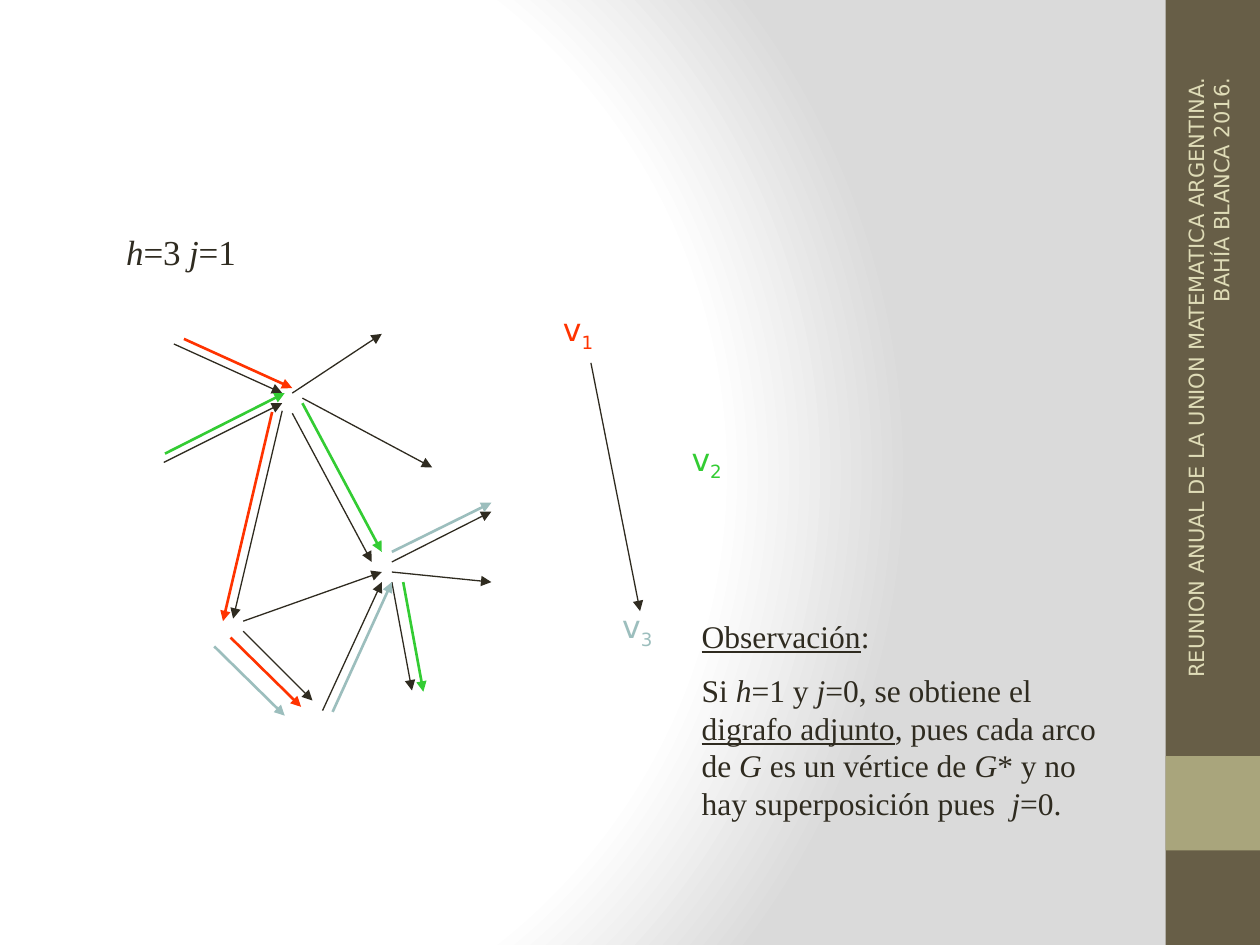
"""Build a slide on paths in a digraph and its adjoint digraph."""
import pptx
import pptx.dml.color
import pptx.enum.shapes
import pptx.enum.text
import pptx.oxml
import pptx.oxml.ns
import pptx.util

RGBColor = pptx.dml.color.RGBColor
INK = RGBColor(0x2F, 0x2B, 0x20)
RED = RGBColor(0xFF, 0x33, 0x00)
GREEN = RGBColor(0x33, 0xCC, 0x33)
TEAL = RGBColor(0x9C, 0xBE, 0xBD)
BROWN = RGBColor(0x67, 0x5E, 0x47)
OLIVE = RGBColor(0xA9, 0xA5, 0x7C)
CREAM = RGBColor(0xDF, 0xDC, 0xB7)
SERIF, SANS = "Times New Roman", "DejaVu Sans"
COLUMNS, ROWS = 10, 7.5
CELL = pptx.util.Inches(1)

BACKGROUND_STOPS = [(0, "FFFFFF"), (75, "FFFFFF"), (100, "DADADA")]

DIGRAPH_ARCS = [
    (1.38, 2.73, 2.24, 3.12), (1.3, 3.67, 2.24, 3.2), (2.32, 3.12, 3.03, 2.65),
    (2.4, 3.16, 3.43, 3.71), (2.32, 3.28, 2.95, 4.46), (3.11, 4.46, 3.9, 4.06),
    (3.11, 4.54, 3.9, 4.62), (3.11, 4.62, 3.27, 5.48), (1.93, 4.93, 3.03, 4.54),
    (2.56, 5.64, 3.03, 4.62), (1.93, 5.01, 2.48, 5.56), (2.24, 3.26, 1.85, 4.91),
]
ADJOINT_ARC = (4.69, 2.88, 5.08, 4.85)
PATHS = [
    ("1", RED, (4.37, 2.41),
     [(2.16, 3.27, 1.77, 4.93), (1.46, 2.69, 2.32, 3.08), (1.83, 5.06, 2.39, 5.61)]),
    ("2", GREEN, (5.39, 3.44),
     [(1.31, 3.6, 2.26, 3.12), (2.4, 3.2, 3.03, 4.38), (3.2, 4.62, 3.36, 5.49)]),
    ("3", TEAL, (4.84, 4.77),
     [(1.7, 5.13, 2.26, 5.68), (2.64, 5.65, 3.11, 4.62), (3.11, 4.38, 3.9, 3.99)]),
]
PARAMETERS = [("h", "i"), ("=3\t", ""), ("j", "i"), ("=1", "")]
REMARK = [
    [("Observación", "u"), (":", "")],
    [("Si ", ""), ("h", "i"), ("=1 y ", ""), ("j", "i"), ("=0, se obtiene el ", ""),
     ("digrafo adjunto", "u"), (", pues cada arco de ", ""), ("G", "i"),
     (" es un vértice de ", ""), ("G", "i"),
     ("* y no hay superposición pues  ", ""), ("j", "i"), ("=0.", "")],
]


def cells(*counts):
    """Convert counts of grid cells to lengths."""
    return [pptx.util.Emu(round(count * CELL)) for count in counts]


def set_background(slide):
    """Fill the background with a circular gradient."""
    slide.background.fill.solid()
    properties = slide.element.find(".//" + pptx.oxml.ns.qn("p:bgPr"))
    stops = "".join(
        f'<a:gs pos="{share * 1000}"><a:srgbClr val="{color}"/></a:gs>'
        for share, color in BACKGROUND_STOPS)
    gradient = pptx.oxml.parse_xml(
        f'<a:gradFill {pptx.oxml.ns.nsdecls("a")} rotWithShape="1">'
        f'<a:gsLst>{stops}</a:gsLst><a:path path="circle">'
        '<a:fillToRect l="20000" t="50000" r="100000" b="50000"/>'
        '</a:path></a:gradFill>')
    properties.replace(properties[0], gradient)


def add_block(slide, box, color):
    """Add a plain rectangle."""
    shape = slide.shapes.add_shape(
        pptx.enum.shapes.MSO_SHAPE.RECTANGLE, *cells(*box))
    shape.shadow.inherit = False
    shape.fill.solid()
    shape.fill.fore_color.rgb = color
    shape.line.fill.background()


def add_arrow(slide, ends, color, width):
    """Add a straight arrow between two grid points."""
    arrow = slide.shapes.add_connector(
        pptx.enum.shapes.MSO_CONNECTOR.STRAIGHT, *cells(*ends))
    arrow.line.color.rgb = color
    arrow.line.width = pptx.util.Pt(width)
    namespace = pptx.oxml.ns.nsdecls("a")
    arrow.line._get_or_add_ln().append(
        pptx.oxml.parse_xml(f'<a:tailEnd {namespace} type="triangle"/>'))
    arrow._element.spPr.append(pptx.oxml.parse_xml(f"<a:effectLst {namespace}/>"))


def add_run(paragraph, text, size, font, color, style=""):
    """Add a run, with i for italic and u for underlined in its style."""
    run = paragraph.add_run()
    run.text = text
    run.font.size = pptx.util.Pt(size)
    run.font.name = font
    run.font.color.rgb = color
    run.font.italic = "i" in style
    run.font.underline = "u" in style
    return run


def add_text_box(slide, box):
    """Add a wrapping text box and return it."""
    text_box = slide.shapes.add_textbox(*cells(*box))
    text_box.text_frame.word_wrap = True
    return text_box


def add_vertex(slide, index, color, corner):
    """Add a vertex label with its subscript."""
    paragraph = add_text_box(slide, (*corner, 0.63, 0.4)).text_frame.paragraphs[0]
    add_run(paragraph, "v", 18, SANS, color)
    subscript = add_run(paragraph, index, 18, SANS, color)
    subscript._r.get_or_add_rPr().set("baseline", "-25000")


def fill_body(slide):
    """Write the parameters in the body placeholder."""
    slide.shapes.title.element.getparent().remove(slide.shapes.title.element)
    body = slide.placeholders[1]
    body.left, body.top, body.width, body.height = cells(0.52, 1.75, 8.33, 5.25)
    paragraph = body.text_frame.paragraphs[0]
    paragraph.space_before = pptx.util.Pt(0)
    properties = paragraph._p.get_or_add_pPr()
    margin, indent = cells(0.38, -0.25)
    properties.set("marL", str(margin))
    properties.set("indent", str(indent))
    properties.append(
        pptx.oxml.parse_xml(f'<a:buNone {pptx.oxml.ns.nsdecls("a")}/>'))
    add_run(paragraph, "\t", 22, "Calibri", INK)
    for text, style in PARAMETERS:
        add_run(paragraph, text, 20, SERIF, INK, style)


def add_remark(slide):
    """Add the remark on the adjoint digraph."""
    frame = add_text_box(slide, (5.47, 4.85, 3.39, 1.77)).text_frame
    for number, runs in enumerate(REMARK):
        paragraph = frame.add_paragraph() if number else frame.paragraphs[0]
        paragraph.space_before = pptx.util.Pt(9 * number)
        for text, style in runs:
            add_run(paragraph, text, 18, SERIF, INK, style)


def add_event(slide):
    """Add the name of the event along the side bar."""
    text_box = add_text_box(slide, (6.89, 3.02, 5.4, 0.4))
    text_box.rotation = 270
    text_box.text_frame.vertical_anchor = pptx.enum.text.MSO_ANCHOR.MIDDLE
    paragraph = text_box.text_frame.paragraphs[0]
    paragraph.alignment = pptx.enum.text.PP_ALIGN.RIGHT
    add_run(paragraph,
            "REUNION ANUAL DE LA UNION MATEMATICA ARGENTINA. BAHÍA BLANCA 2016.",
            12, SANS, CREAM)


def main():
    """Build and save the slide."""
    presentation = pptx.Presentation()
    presentation.slide_width, presentation.slide_height = cells(COLUMNS, ROWS)
    slide = presentation.slides.add_slide(presentation.slide_layouts[1])
    set_background(slide)
    fill_body(slide)
    add_block(slide, (COLUMNS - 0.75, 0, 0.75, ROWS), BROWN)
    add_block(slide, (COLUMNS - 0.75, 6, 0.75, 0.75), OLIVE)
    for arc in [*DIGRAPH_ARCS, ADJOINT_ARC]:
        add_arrow(slide, arc, INK, 0.75)
    for index, color, corner, arcs in PATHS:
        for arc in arcs:
            add_arrow(slide, arc, color, 1.5)
        add_vertex(slide, index, color, corner)
    add_remark(slide)
    add_event(slide)
    presentation.save("out.pptx")


if __name__ == "__main__":
    main()
